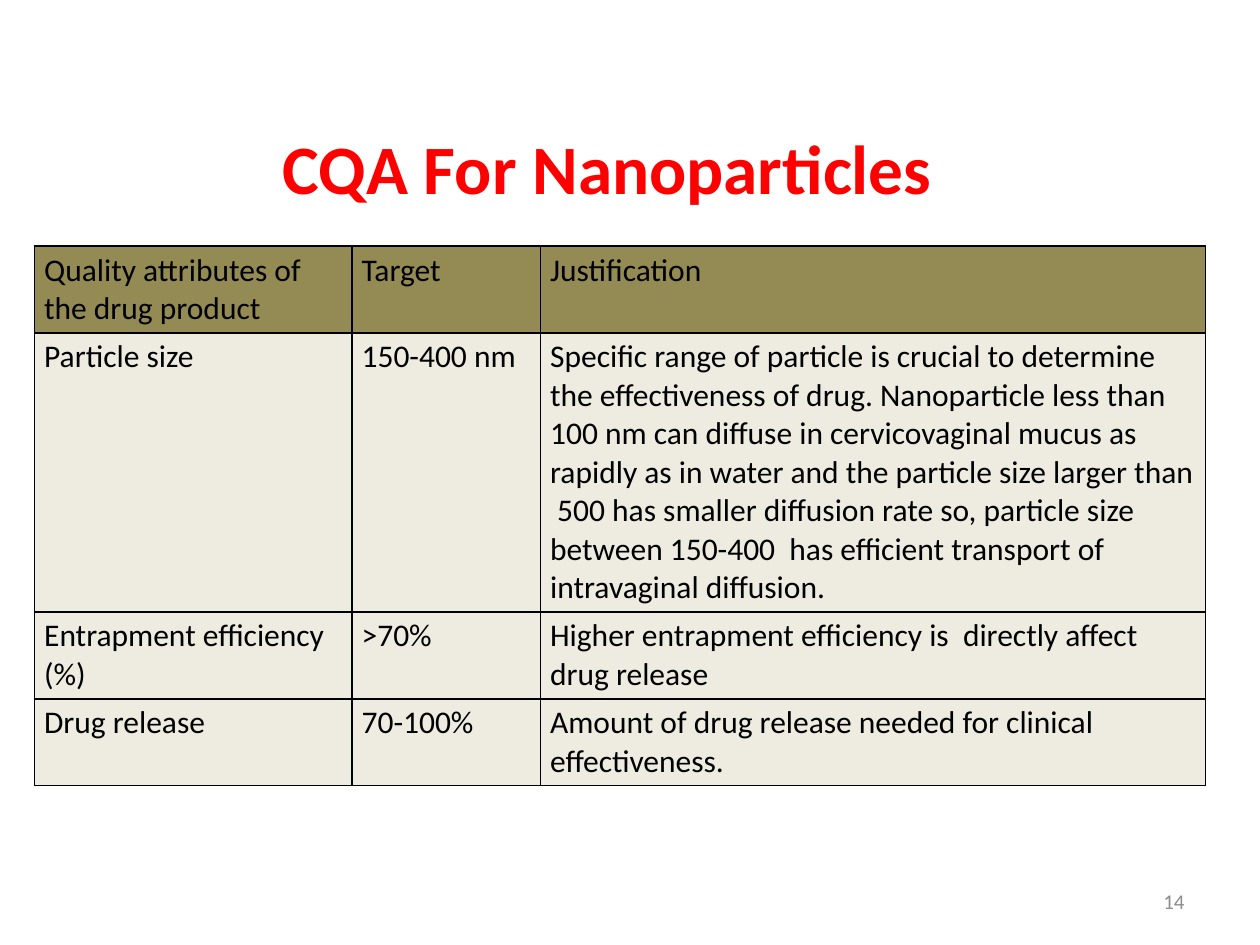
import dataclasses

import pptx
import pptx.dml.color
import pptx.enum.text
import pptx.oxml
import pptx.oxml.ns
import pptx.util


@dataclasses.dataclass(frozen=True)
class Theme:
    font: str = "Calibri"
    title_size: float = 39.6
    cell_size: float = 18
    number_size: float = 12
    title: str = "FF0000"
    text: str = "000000"
    number: str = "8C8C8C"
    header_fill: str = "948A54"
    body_fill: str = "EEECE1"
    border: str = "000000"
    border_width: float = 1


class SlideBuilder:
    """Holds the theme and the current slide; lengths are in centimetres."""

    def __init__(self, slide, theme):
        self.slide = slide
        self.theme = theme

    def set_text(self, frame, text, size, color, align, bold=False):
        """Fill a text frame, one paragraph per line of text."""
        frame.word_wrap = True
        frame.text = text
        for paragraph in frame.paragraphs:
            paragraph.alignment = align
            font = paragraph.font
            font.name, font.size, font.bold = self.theme.font, pptx.util.Pt(size), bold
            font.color.rgb = pptx.dml.color.RGBColor.from_string(color)

    def title(self, text, *box):
        heading = self.slide.shapes.title
        heading.left, heading.top, heading.width, heading.height = map(pptx.util.Cm, box)
        frame = heading.text_frame
        frame.auto_size = pptx.enum.text.MSO_AUTO_SIZE.NONE
        frame.vertical_anchor = pptx.enum.text.MSO_ANCHOR.MIDDLE
        self.set_text(frame, text, self.theme.title_size, self.theme.title,
                      pptx.enum.text.PP_ALIGN.CENTER, bold=True)

    def page_number(self, text, *box):
        frame = self.slide.shapes.add_textbox(*map(pptx.util.Cm, box)).text_frame
        frame.vertical_anchor = pptx.enum.text.MSO_ANCHOR.MIDDLE
        self.set_text(frame, text, self.theme.number_size, self.theme.number,
                      pptx.enum.text.PP_ALIGN.RIGHT)

    def table(self, rows, left, top, widths, heights):
        box = map(pptx.util.Cm, (left, top, sum(widths), sum(heights)))
        grid = self.slide.shapes.add_table(len(rows), len(widths), *box).table
        for column, width in zip(grid.columns, widths):
            column.width = pptx.util.Cm(width)
        for row, height in zip(grid.rows, heights):
            row.height = pptx.util.Cm(height)
        for r, row in enumerate(rows):
            fill = self.theme.body_fill if r else self.theme.header_fill
            for c, text in enumerate(row):
                self.cell(grid.cell(r, c), text, fill)

    def cell(self, cell, text, fill):
        cell.margin_left = cell.margin_right = pptx.util.Cm(0.19)
        cell.margin_top = cell.margin_bottom = pptx.util.Cm(0.1)
        self.set_text(cell.text_frame, text, self.theme.cell_size, self.theme.text,
                      pptx.enum.text.PP_ALIGN.LEFT)
        # Borders come before the fill in the cell properties
        properties = cell._tc.get_or_add_tcPr()
        for side in ("lnL", "lnR", "lnT", "lnB"):
            properties.append(pptx.oxml.parse_xml(
                f'<a:{side} {pptx.oxml.ns.nsdecls("a")} '
                f'w="{pptx.util.Pt(self.theme.border_width)}"><a:solidFill>'
                f'<a:srgbClr val="{self.theme.border}"/></a:solidFill></a:{side}>'))
        cell.fill.solid()
        cell.fill.fore_color.rgb = pptx.dml.color.RGBColor.from_string(fill)


QUALITY_ATTRIBUTES = [
    ("Quality attributes of the drug product", "Target", "Justification"),
    ("Particle size", "150-400 nm",
     "Specific range of particle is crucial to determine the effectiveness of drug. "
     "Nanoparticle less than 100 nm can diffuse in cervicovaginal mucus as rapidly as "
     "in water and the particle size larger than  500 has smaller diffusion rate so, "
     "particle size between 150-400  has efficient transport of intravaginal diffusion."),
    ("Entrapment efficiency\n(%)", ">70%",
     "Higher entrapment efficiency is  directly affect drug release"),
    ("Drug release", "70-100%",
     "Amount of drug release needed for clinical effectiveness."),
]


def main():
    presentation = pptx.Presentation()
    presentation.slide_width = pptx.util.Cm(25.4)
    presentation.slide_height = pptx.util.Cm(19.05)
    title_only = presentation.slide_layouts[5]
    builder = SlideBuilder(presentation.slides.add_slide(title_only), Theme())

    # Heading
    builder.title("CQA For Nanoparticles", 2.11, 2.67, 20.27, 1.4)

    # Critical quality attributes
    builder.table(QUALITY_ATTRIBUTES, 0.7, 4.96,
                  widths=[6.4, 3.8, 13.4], heights=[1.45, 4.62, 1.57, 1.45])

    # Page number
    builder.page_number("14", 18.2, 17.66, 5.93, 1.01)

    presentation.save("out.pptx")


if __name__ == "__main__":
    main()
